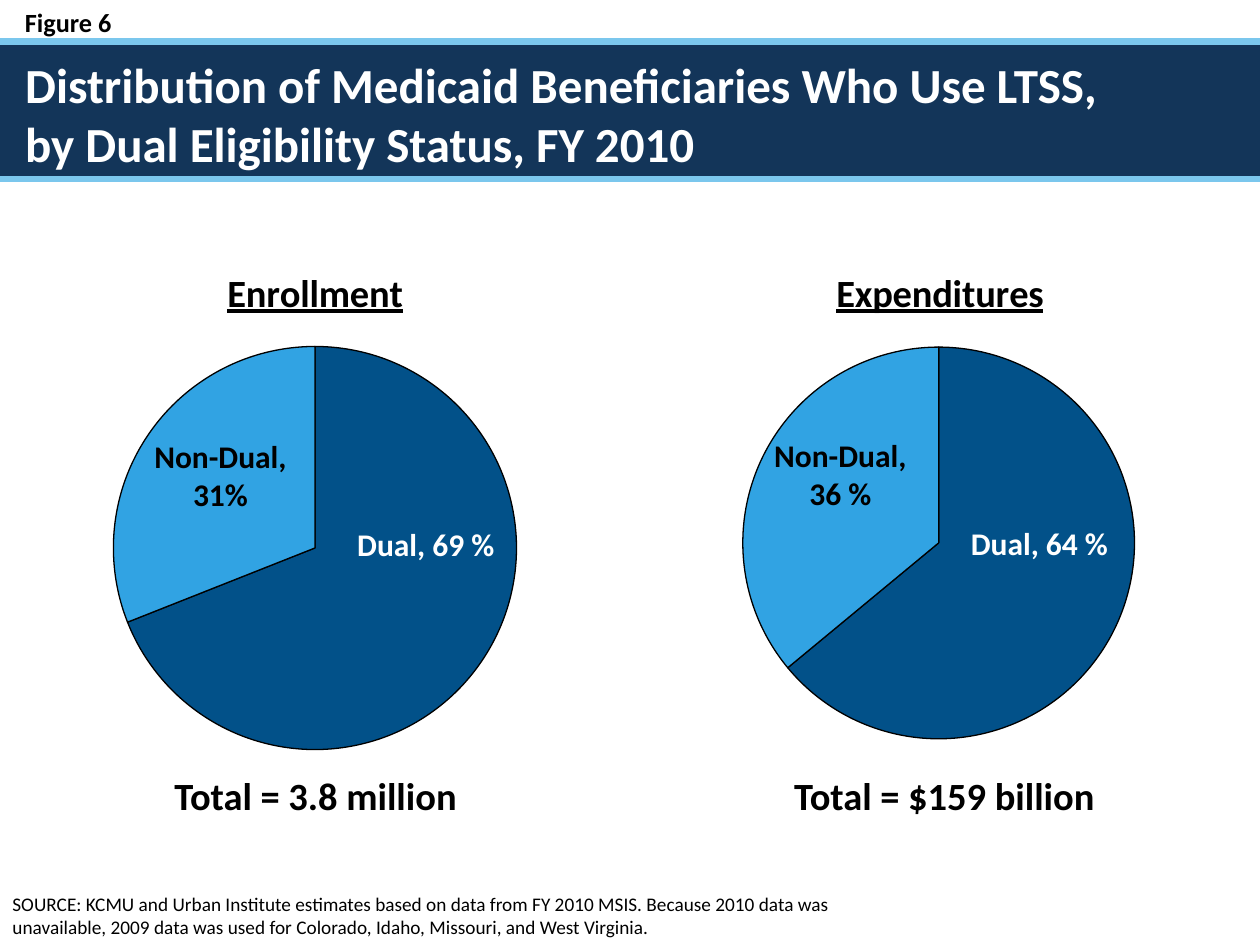
from lxml.etree import SubElement
from pptx import Presentation
from pptx.chart.data import CategoryChartData
from pptx.dml.color import RGBColor
from pptx.enum.chart import XL_CHART_TYPE as CT
from pptx.enum.shapes import MSO_CONNECTOR as MC, MSO_SHAPE as MS
from pptx.enum.text import MSO_ANCHOR as MA, MSO_AUTO_SIZE as AS, PP_ALIGN as PA
from pptx.oxml.ns import qn
from pptx.util import Inches, Pt

COLS, ROWS = 100, 75
BLACK, WHITE = "000000", "FFFFFF"
NAVY, SKY = "133559", "7BC7ED"
DUAL, NON_DUAL = "025189", "31A3E3"


def rgb(value):
    return RGBColor.from_string(value)


class Deck:
    font = "Calibri"

    def __init__(self):
        self.prs = Presentation()
        self.prs.slide_width, self.prs.slide_height = Inches(10), Inches(7.5)
        self.s = self.prs.slides.add_slide(self.prs.slide_layouts[5])

    def grid(self, *cells):
        spans = (self.prs.slide_width / COLS, self.prs.slide_height / ROWS)
        return [round(c * spans[i % 2]) for i, c in enumerate(cells)]

    def style(self, font, size, color=BLACK, bold=True):
        font.name, font.size, font.bold = self.font, Pt(size), bold
        font.color.rgb = rgb(color)

    def fill_text(self, sp, text, size, color=BLACK, bold=True,
                  align=PA.LEFT, anchor=MA.TOP, wrap=True):
        tf = sp.text_frame
        tf.text = text
        tf.auto_size, tf.word_wrap, tf.vertical_anchor = AS.NONE, wrap, anchor
        p = tf.paragraphs[0]
        p.alignment = align
        self.style(p.font, size, color, bold)

    def text(self, box, text, size, **look):
        self.fill_text(self.s.shapes.add_textbox(*self.grid(*box)), text, size, **look)

    def title(self, box, text, size, color):
        sp = self.s.shapes.title
        sp.left, sp.top, sp.width, sp.height = self.grid(*box)
        self.fill_text(sp, text, size, color, anchor=MA.MIDDLE)
        sp.element.getparent().append(sp.element)

    def band(self, box, color):
        sp = self.s.shapes.add_shape(MS.RECTANGLE, *self.grid(*box))
        sp.shadow.inherit = False
        sp.fill.solid()
        sp.fill.fore_color.rgb = rgb(color)
        sp.line.fill.background()

    def rule(self, row, color, width):
        ln = self.s.shapes.add_connector(MC.STRAIGHT, *self.grid(0, row, COLS, row))
        ln.line.color.rgb, ln.line.width = rgb(color), Pt(width)
        SubElement(ln.element.spPr, qn("a:effectLst"))

    def pie(self, box, name, values, center, diameter):
        data = CategoryChartData()
        data.categories = ["1", "2"]
        data.add_series(name, values)
        chart = self.s.shapes.add_chart(CT.PIE, *self.grid(*box), data).chart
        self.style(chart.font, 18)
        chart.has_legend = False
        chart.has_title = True
        tf = chart.chart_title.text_frame
        tf.text = name
        self.style(tf.paragraphs[0].font, 22)
        tf.paragraphs[0].font.underline = True
        plot = chart.plots[0]
        plot.vary_by_categories = True
        for i, color in enumerate((DUAL, NON_DUAL)):
            fmt = plot.series[0].points[i].format
            fmt.fill.solid()
            fmt.fill.fore_color.rgb = rgb(color)
            fmt.line.color.rgb, fmt.line.width = rgb(BLACK), Pt(0.75)
        self.place_plot(chart, box, center, diameter)

    def place_plot(self, chart, box, center, diameter):
        left, top, width, height = box
        area = chart.element.find(".//" + qn("c:plotArea"))
        for old in area.findall(qn("c:layout")):
            area.remove(old)
        layout = SubElement(area, qn("c:layout"))
        area.insert(0, layout)
        manual = SubElement(layout, qn("c:manualLayout"))
        marks = {
            "layoutTarget": "inner", "xMode": "edge", "yMode": "edge",
            "x": (center[0] - diameter / 2 - left) / width,
            "y": (center[1] - diameter / 2 - top) / height,
            "w": diameter / width, "h": diameter / height,
        }
        for tag, value in marks.items():
            SubElement(manual, qn("c:" + tag)).set("val", str(value))


def main():
    d = Deck()
    d.text((1, 0, 98, 3.5), "Figure 6", 15)
    d.band((0, 3.3, COLS, 10.8), NAVY)
    for row in (3.3, 14.2):
        d.rule(row, SKY, 3.7)
    d.title((1, 4, 98, 10), "Distribution of Medicaid Beneficiaries Who Use LTSS,\v"
            "by Dual Eligibility Status, FY 2010", 28, WHITE)
    d.pie((-15, 19.2, 80, 41.7), "Enrollment", (69, 31), (25, 43.5), 32)
    d.pie((42.5, 19.2, 64.2, 40.8), "Expenditures", (64, 36), (74.5, 43.1), 31.1)
    labels = [
        ((10, 34.2, 15, 7.1), "Non-Dual, 31%", 18, BLACK, True),
        ((59.2, 34.1, 15, 7.1), "Non-Dual, 36 %", 18, BLACK, True),
        ((26.3, 41.2, 15, 4), "Dual, 69 %", 18, WHITE, True),
        ((75, 41.1, 15, 4), "Dual, 64 %", 18, WHITE, True),
        ((12.7, 60.8, 24.7, 4.7), "Total = 3.8 million", 22, BLACK, False),
        ((61.9, 60.8, 26.1, 4.7), "Total = $159 billion", 22, BLACK, False),
    ]
    for box, text, size, color, wrap in labels:
        d.text(box, text, size, color=color, align=PA.CENTER, wrap=wrap)
    d.text((0, 68, 67.5, 7), "SOURCE: KCMU and Urban Institute estimates based on data from "
           "FY 2010 MSIS. Because 2010 data was unavailable, 2009 data was used for "
           "Colorado, Idaho, Missouri, and West Virginia.", 11, bold=False, anchor=MA.BOTTOM)
    d.prs.save("out.pptx")


if __name__ == "__main__":
    main()
